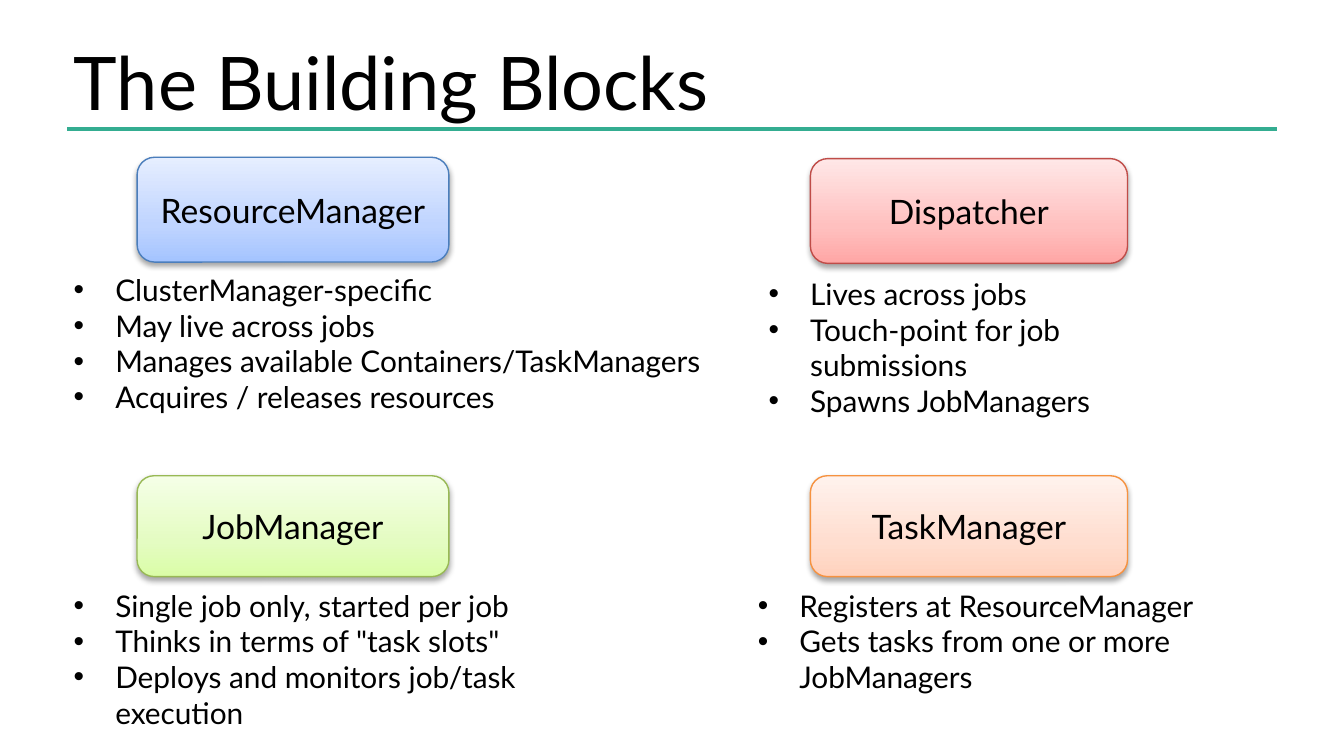
"""Build the slide that shows the four building blocks of a cluster."""
from copy import deepcopy

from lxml.etree import SubElement
from pptx import Presentation
from pptx.dml.color import RGBColor
from pptx.enum.shapes import MSO_CONNECTOR, MSO_SHAPE
from pptx.enum.text import MSO_ANCHOR, PP_ALIGN
from pptx.oxml import parse_xml
from pptx.oxml.ns import nsdecls, qn
from pptx.util import Inches, Pt

INK = {
    "text": "000000",
    "rule": "34AD91",
    "blue": ("4B7EBC", "A4C4FF", "BFD4FF", "E6EEFF"),
    "red": ("BF4C48", "FFA6A5", "FFC0BF", "FFE7E7"),
    "green": ("98B955", "DAFDA7", "E4FCC2", "F5FFE7"),
    "orange": ("F69240", "FFD2BD", "FFDED0", "FFF2ED"),
}
FORMATS = {
    "title": {"name": "Lato", "size": Pt(39.6)},
    "block": {"name": "Lato", "size": Pt(18)},
    "list": {"name": "Lato", "size": Pt(16)},
}
SHADOW = (
    f'<a:outerShdw {nsdecls("a")} blurRad="38100" dist="22860" dir="5400000" '
    'rotWithShape="0"><a:srgbClr val="000000"><a:alpha val="35000"/>'
    "</a:srgbClr></a:outerShdw>"
)
BLOCKS = [
    ("ResourceManager", "blue", (1.02, 1.17, 2.32, 0.78), (0.45, 1.97, 5.09, 1.18),
     ["ClusterManager-specific", "May live across jobs",
      "Manages available Containers/TaskManagers", "Acquires / releases resources"]),
    ("Dispatcher", "red", (6.03, 1.18, 2.36, 0.78), (5.62, 2, 3.44, 0.91),
     ["Lives across jobs", "Touch-point for job submissions", "Spawns JobManagers"]),
    ("JobManager", "green", (1.02, 3.54, 2.32, 0.75), (0.45, 4.32, 4.26, 0.91),
     ["Single job only, started per job", 'Thinks in terms of "task slots"',
      "Deploys and monitors job/task execution"]),
    ("TaskManager", "orange", (6.03, 3.54, 2.36, 0.75), (5.54, 4.32, 4.16, 0.91),
     ["Registers at ResourceManager", "Gets tasks from one or more JobManagers"]),
]


def style(para, text, kind):
    para.text = text
    for key, value in FORMATS[kind].items():
        setattr(para.font, key, value)
    para.font.color.rgb = RGBColor.from_string(INK["text"])


def inset(frame, size):
    for side in ("left", "top", "right", "bottom"):
        setattr(frame, f"margin_{side}", Inches(size))
    frame.vertical_anchor = MSO_ANCHOR.MIDDLE


deck = Presentation()
deck.slide_width = Inches(10)
deck.slide_height = Inches(10 * 9 / 16)
slide = deck.slides.add_slide(deck.slide_layouts[6])
shapes = slide.shapes

rule = shapes.add_connector(
    MSO_CONNECTOR.STRAIGHT, Inches(0.5), Inches(0.96), Inches(9.5), Inches(0.96))
rule.line.color.rgb = RGBColor.from_string(INK["rule"])
rule.line.width = Pt(2)
SubElement(rule._element.spPr, qn("a:effectLst"))

title = shapes.add_textbox(Inches(0.5), Inches(0.23), Inches(9), Inches(0.74)).text_frame
title.word_wrap = True
inset(title, 0.05)
style(title.paragraphs[0], "The Building Blocks", "title")

for name, hue, place, area, points in BLOCKS:
    edge, *tints = INK[hue]
    block = shapes.add_shape(MSO_SHAPE.ROUNDED_RECTANGLE, *map(Inches, place))
    block.fill.gradient()
    block.fill.gradient_angle = 90
    stops = block._element.spPr.find(f".//{qn('a:gsLst')}")
    stops.append(deepcopy(stops[-1]))
    for stop, tint, spot in zip(block.fill.gradient_stops, tints, (0, 0.35, 1)):
        stop.color.rgb = RGBColor.from_string(tint)
        stop.position = spot
    block.line.color.rgb = RGBColor.from_string(edge)
    block.line.width = Pt(0.75)
    block.shadow.inherit = False
    block._element.spPr.find(qn("a:effectLst")).append(parse_xml(SHADOW))
    label = block.text_frame
    label.word_wrap = False
    inset(label, 0)
    style(label.paragraphs[0], name, "block")
    label.paragraphs[0].alignment = PP_ALIGN.CENTER

    notes = shapes.add_textbox(*map(Inches, area)).text_frame
    notes.word_wrap = True
    for row, point in enumerate(points):
        para = notes.add_paragraph() if row else notes.paragraphs[0]
        props = para._p.get_or_add_pPr()
        props.set("marL", str(Inches(0.31)))
        props.set("indent", str(Inches(-0.31)))
        SubElement(props, qn("a:buFont"), typeface="Arial")
        SubElement(props, qn("a:buChar"), char="•")
        style(para, point, "list")

deck.save("out.pptx")
